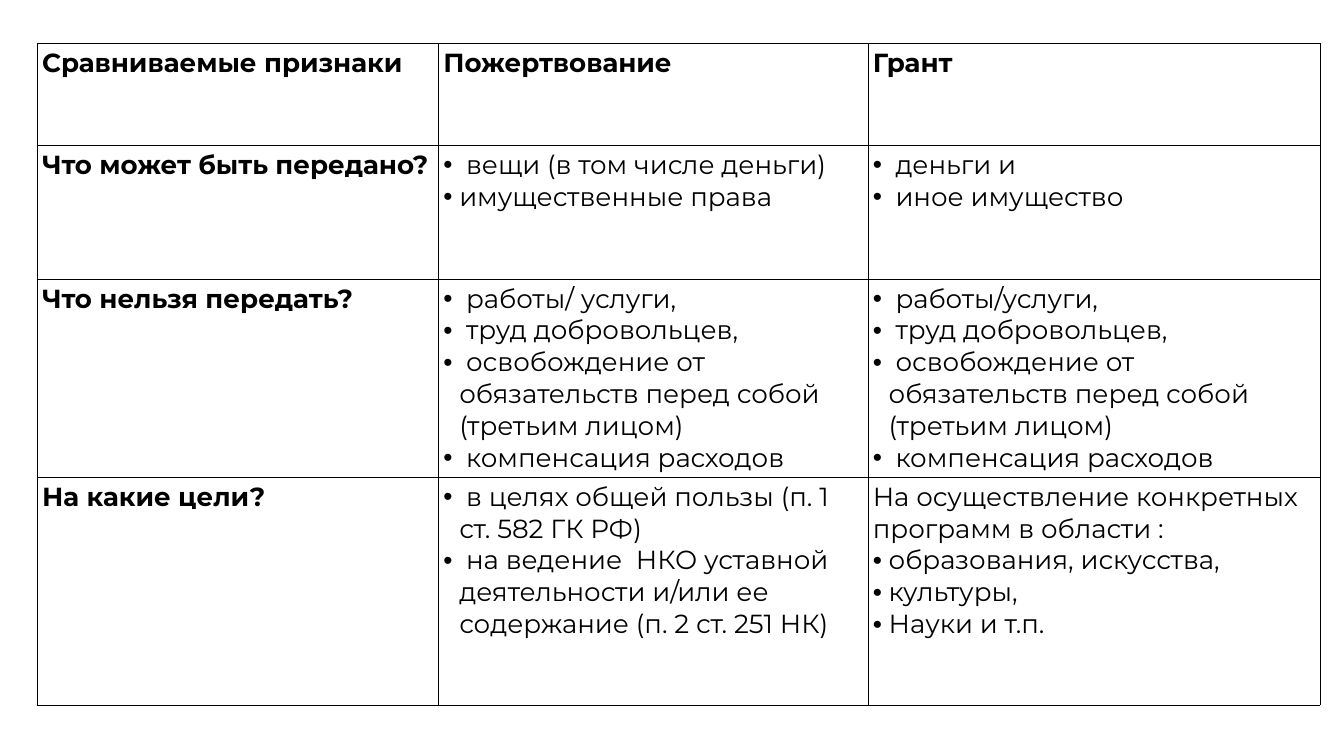
from lxml.etree import SubElement
from pptx import Presentation
from pptx.dml.color import RGBColor
from pptx.enum.text import PP_ALIGN
from pptx.oxml.ns import qn
from pptx.util import Cm, Pt

COLORS = {"text": "000000", "border": "000000"}
FONT = "Montserrat"
BULLET = "•"

# Each cell is a list of paragraphs; a leading bullet marks a list item
ROWS = [
    [["Сравниваемые признаки"], ["Пожертвование"], ["Грант"]],
    [
        ["Что может быть передано?"],
        ["• вещи (в том числе деньги)", "•имущественные права"],
        ["• деньги и", "• иное имущество"],
    ],
    [
        ["Что нельзя передать?"],
        ["• работы/ услуги,", "• труд добровольцев,",
         "• освобождение от обязательств перед собой (третьим лицом)",
         "• компенсация расходов"],
        ["• работы/услуги,", "• труд добровольцев,",
         "• освобождение от обязательств перед собой (третьим лицом)",
         "• компенсация расходов"],
    ],
    [
        ["На какие цели?"],
        ["• в целях общей пользы (п. 1 ст. 582 ГК РФ)",
         "• на ведение  НКО уставной деятельности и/или ее содержание "
         "(п. 2 ст. 251 НК)"],
        ["На осуществление конкретных программ в области :",
         "•образования, искусства,", "•культуры,", "•Науки и т.п."],
    ],
]
COLUMN_WIDTHS = [15.17, 16.23, 17.1]
ROW_HEIGHTS = [3.86, 5.06, 7.49, 8.61]


def add_bullet(paragraph):
    properties = paragraph._p.get_or_add_pPr()
    properties.set("marL", str(Cm(0.6)))
    properties.set("indent", str(-Cm(0.6)))
    color = SubElement(properties, qn("a:buClr"))
    SubElement(color, qn("a:srgbClr"), val=COLORS["text"])
    SubElement(properties, qn("a:buFont"), typeface="Arial")
    SubElement(properties, qn("a:buChar"), char=BULLET)


def add_borders(cell):
    properties = cell._tc.get_or_add_tcPr()
    for position, side in enumerate(("lnL", "lnR", "lnT", "lnB")):
        line = SubElement(properties, qn(f"a:{side}"), w=str(Pt(0.5)))
        fill = SubElement(line, qn("a:solidFill"))
        SubElement(fill, qn("a:srgbClr"), val=COLORS["border"])
        properties.insert(position, line)  # borders come before the fill


presentation = Presentation()
presentation.slide_width = Cm(50.8)
presentation.slide_height = Cm(28.58)
slide = presentation.slides.add_slide(presentation.slide_layouts[6])

# Comparison table
table = slide.shapes.add_table(
    len(ROWS), len(COLUMN_WIDTHS), Cm(1.4), Cm(1.64),
    Cm(sum(COLUMN_WIDTHS)), Cm(sum(ROW_HEIGHTS)),
).table
table.first_row = False
table.horz_banding = False
for column, width in zip(table.columns, COLUMN_WIDTHS):
    column.width = Cm(width)
for row, height in zip(table.rows, ROW_HEIGHTS):
    row.height = Cm(height)

# Cells
for row_index, row in enumerate(ROWS):
    for column_index, texts in enumerate(row):
        cell = table.cell(row_index, column_index)
        cell.fill.background()
        cell.margin_left = cell.margin_right = Cm(0.19)
        cell.margin_top = cell.margin_bottom = Cm(0.13)
        add_borders(cell)

        frame = cell.text_frame
        for index, text in enumerate(texts):
            paragraph = frame.add_paragraph() if index else frame.paragraphs[0]
            paragraph.text = text.removeprefix(BULLET)
            paragraph.alignment = PP_ALIGN.LEFT
            paragraph.font.name = FONT
            paragraph.font.size = Pt(28)
            paragraph.font.bold = row_index == 0 or column_index == 0
            paragraph.font.color.rgb = RGBColor.from_string(COLORS["text"])
            if text.startswith(BULLET):
                add_bullet(paragraph)

# The list of grant purposes is justified
for paragraph in table.cell(3, 2).text_frame.paragraphs[1:]:
    paragraph.alignment = PP_ALIGN.JUSTIFY

presentation.save("out.pptx")
